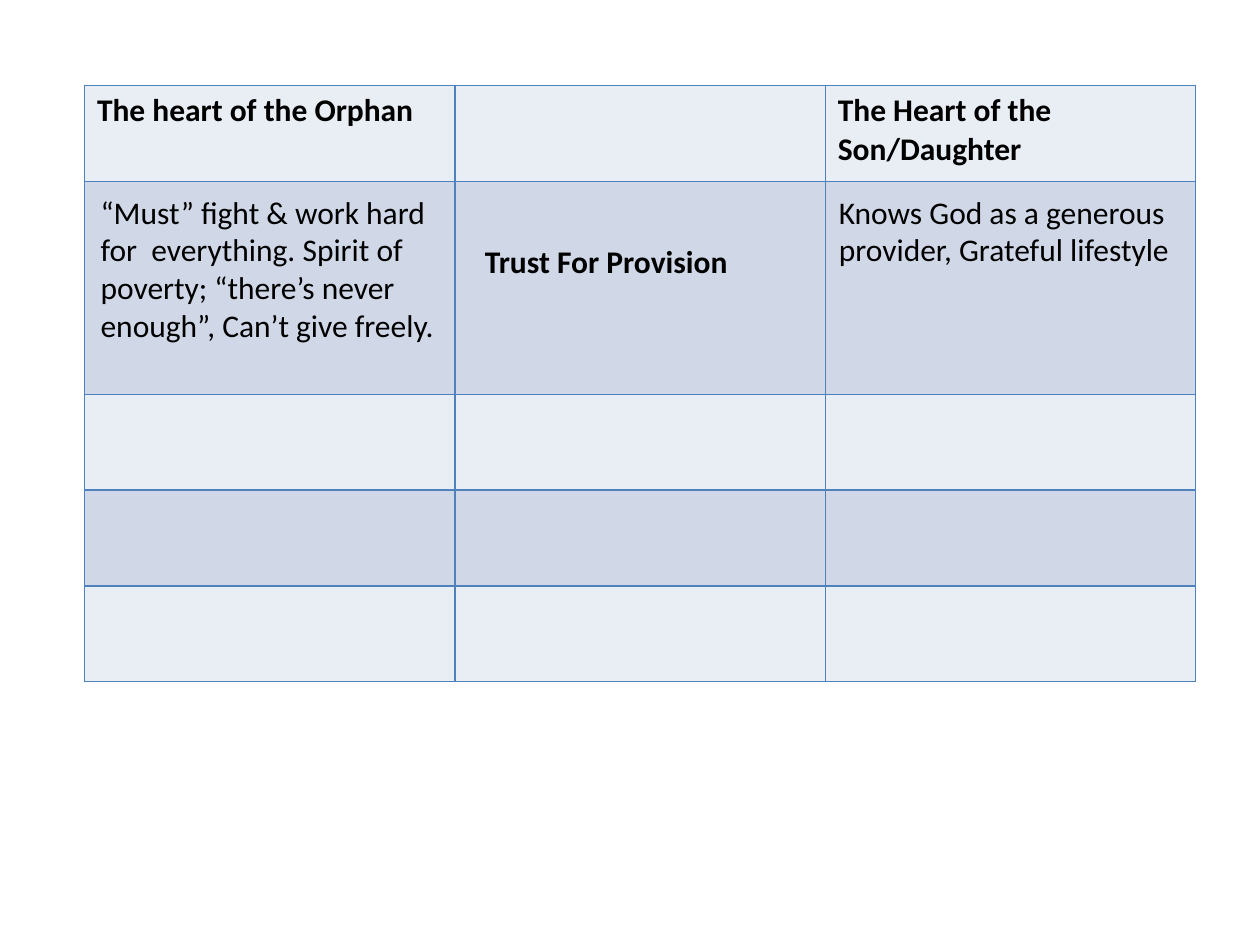
from lxml import etree
from pptx import Presentation, util as u
from pptx.dml.color import RGBColor
from pptx.enum import text
from pptx.oxml.ns import qn

# Content
HEADINGS = ["The heart of the Orphan", "", "The Heart of the Son/Daughter"]
ROW_HEIGHTS = [0.76, 1.69, 0.76, 0.76, 0.76]
COLUMN_WIDTH = 2.94
TABLE_LEFT, TABLE_TOP = 0.67, 0.68
BAND_FILLS = ["E9EDF4", "D0D8E8"]
BORDER = "4F81BD"

# Notes over the second row: wording, column, offset in the cell, size, bold
NOTES = [
    ("“Must” fight & work hard for  everything. Spirit of poverty; "
     "“there’s never enough”, Can’t give freely.", 0, (0.03, 0.04), (2.89, 1.31), False),
    ("Knows God as a generous provider, Grateful lifestyle",
     2, (0.01, 0.04), (2.97, 0.71), False),
    ("Trust For Provision", 1, (0.14, 0.43), (2.66, 0.4), True),
]


def color(value):
    return RGBColor.from_string(value)


def style_text(frame, bold):
    font = frame.paragraphs[0].font
    font.name, font.size, font.bold = "Calibri", u.Pt(18), bold
    font.color.rgb = color("000000")


def add_borders(cell):
    properties = cell._tc.get_or_add_tcPr()
    for side in ("lnL", "lnR", "lnT", "lnB"):
        line = etree.SubElement(properties, qn(f"a:{side}"), w=str(u.Pt(1)))
        fill = etree.SubElement(line, qn("a:solidFill"))
        etree.SubElement(fill, qn("a:srgbClr"), val=BORDER)


def add_comparison_table(slide):
    shape = slide.shapes.add_table(
        len(ROW_HEIGHTS), len(HEADINGS), u.Inches(TABLE_LEFT), u.Inches(TABLE_TOP),
        u.Inches(COLUMN_WIDTH * len(HEADINGS)), u.Inches(sum(ROW_HEIGHTS)))
    table = shape.table
    for column in table.columns:
        column.width = u.Inches(COLUMN_WIDTH)
    for index, height in enumerate(ROW_HEIGHTS):
        table.rows[index].height = u.Inches(height)
        for cell in table.rows[index].cells:
            add_borders(cell)
            cell.fill.solid()
            cell.fill.fore_color.rgb = color(BAND_FILLS[index % 2])
    for index, heading in enumerate(HEADINGS):
        if heading:
            cell = table.cell(0, index)
            cell.text = heading
            style_text(cell.text_frame, True)


def add_note(slide, wording, column, offset, size, bold):
    left = TABLE_LEFT + column * COLUMN_WIDTH + offset[0]
    top = TABLE_TOP + ROW_HEIGHTS[0] + offset[1]
    box = slide.shapes.add_textbox(*(u.Inches(value) for value in (left, top, *size)))
    frame = box.text_frame
    frame.word_wrap = True
    frame.auto_size = text.MSO_AUTO_SIZE.SHAPE_TO_FIT_TEXT
    frame.text = wording
    style_text(frame, bold)


def main():
    presentation = Presentation()
    presentation.slide_width, presentation.slide_height = u.Inches(10), u.Inches(7.5)
    slide = presentation.slides.add_slide(presentation.slide_layouts[6])
    add_comparison_table(slide)
    for note in NOTES:
        add_note(slide, *note)
    presentation.save("out.pptx")


if __name__ == "__main__":
    main()
